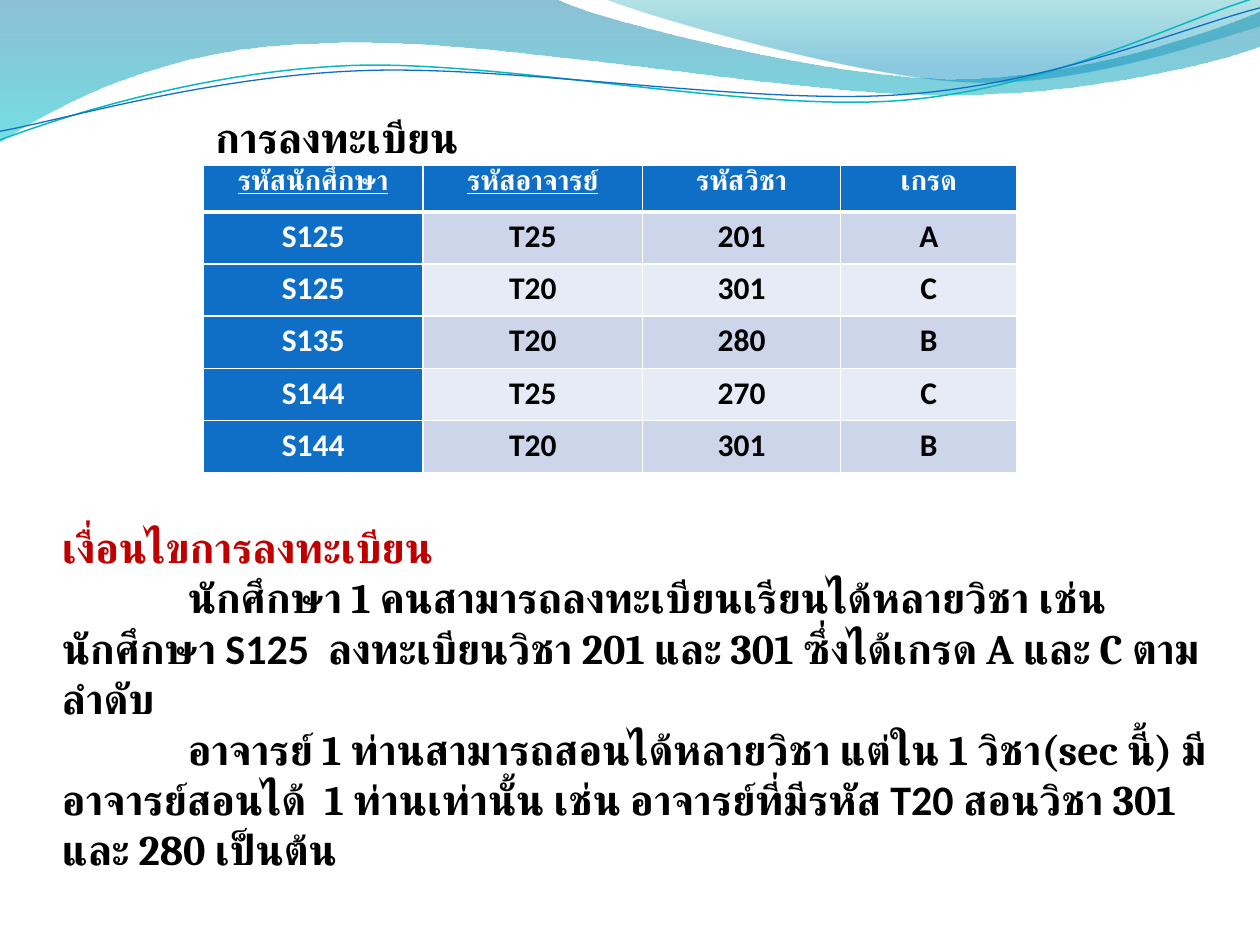
"""Build the course registration slide: a table and its conditions under a wave header."""
from lxml.etree import SubElement
from pptx import Presentation
from pptx.dml.color import RGBColor
from pptx.enum.text import MSO_ANCHOR, MSO_AUTO_SIZE, PP_ALIGN
from pptx.oxml.ns import qn
from pptx.util import Pt

COLORS = {
    "white": "FFFFFF", "black": "000000", "blue": "0F6FC6", "red": "C00000",
    "band_dark": "CCD5EA", "band_light": "E7EBF5", "teal": "0AB8BF",
    "deep_blue": "0074A1", "cyan": "00C6CF", "green": "00A1A9", "sky": "008BBF",
}


def style_font(font, name, size, color):
    """Set a bold font for Latin and Thai text alike."""
    font.name, font.size, font.bold = name, Pt(size), True
    font.color.rgb = RGBColor.from_string(COLORS[color])
    SubElement(font._element, qn("a:cs"), typeface=name)


def draw_path(shapes, start, steps, closed):
    """Draw a freeform from line ends (x, y) and cubic curves (x1, y1, x2, y2, x, y)."""
    builder = shapes.build_freeform(Pt(start[0]), Pt(start[1]))
    builder.add_line_segments([(Pt(step[-2]), Pt(step[-1])) for step in steps], close=closed)
    shape = builder.convert_to_shape()
    shape.shadow.inherit = False
    segments = list(shape._element.iter(qn("a:lnTo")))
    for segment, step in zip(segments, steps):
        if len(step) == 6:
            curve = SubElement(segment.getparent(), qn("a:cubicBezTo"))
            for x, y in zip(step[::2], step[1::2]):
                SubElement(curve, qn("a:pt"), x=str(Pt(x) - shape.left), y=str(Pt(y) - shape.top))
            segment.getparent().replace(segment, curve)
    return shape


deck = Presentation()
deck.slide_width, deck.slide_height = Pt(720), Pt(540)
page = deck.slides.add_slide(deck.slide_layouts[5])

waves = [
    ((0, 0), [(317, -1), (343, 12, 478, 45, 546, 45), (614, 45, 690, 19, 720, 6.5), (721, 26),
              (708, 32, 626, 55, 537, 54), (448, 54, 275, 20, 185, 24.5), (93, 26, 33, 60, -1, 81.5)],
     [(0, "deep_blue", 45), (1, "cyan", 55)]),
    ((345, -1), [(366, 8, 491, 45, 554, 47), (616, 50, 692, 23, 720, 15), (720, 0)],
     [(0, "green", 30), (0.8, "sky", 45)]),
]
for start, steps, stops in waves:
    wave = draw_path(page.shapes, start, steps, True)
    wave.line.fill.background()
    wave.fill.gradient()
    wave.fill.gradient_angle = 270
    for stop, (position, color, opacity) in zip(wave.fill.gradient_stops, stops):
        stop.position = position
        stop.color.rgb = RGBColor.from_string(COLORS[color])
        color_element = stop._gs.find(qn("a:srgbClr"))
        SubElement(color_element, qn("a:alpha"), val=str(opacity * 1000))

strands = [
    ((0, 80), [(34.5, 67, 114, 41, 199.5, 37.5), (284.5, 34, 427, 64, 513.5, 57.5),
               (600, 51, 675, 11, 718.5, -1.5)], "teal", 0.85),
    ((0, 75), [(34, 69, 118, 44, 204, 40.5), (290, 36.5, 430, 60.5, 516, 54),
               (602, 48, 678, 15, 720, 4.5)], "blue", 0.75),
]
for start, steps, color, width in strands:
    strand = draw_path(page.shapes, start, steps, False)
    strand.fill.background()
    strand.line.color.rgb = RGBColor.from_string(COLORS[color])
    strand.line.width = Pt(width)

rows = [
    ("รหัสนักศึกษา", "รหัสอาจารย์", "รหัสวิชา", "เกรด"),
    ("S125", "T25", "201", "A"),
    ("S125", "T20", "301", "C"),
    ("S135", "T20", "280", "B"),
    ("S144", "T25", "270", "C"),
    ("S144", "T20", "301", "B"),
]
widths = [125.5, 125.5, 113.2, 100.8]
table = page.shapes.add_table(len(rows), len(widths), Pt(116.2), Pt(94.6), Pt(465), Pt(175.5)).table
for column, width in zip(table.columns, widths):
    column.width = Pt(width)
for r, texts in enumerate(rows):
    table.rows[r].height = Pt(26.5 if r == 0 else 29.8)
    for c, text in enumerate(texts):
        cell = table.cell(r, c)
        cell.text = text
        cell.margin_left = cell.margin_right = Pt(5)
        cell.margin_top = cell.margin_bottom = 0
        para = cell.text_frame.paragraphs[0]
        para.alignment = PP_ALIGN.CENTER
        para.line_spacing = 1.0 if r == 0 else 1.15
        span = para.runs[0]
        dark = r == 0 or c == 0
        style_font(span.font, "Cambria" if r == 0 else "Calibri", 16 if r == 0 else 18,
                   "white" if dark else "black")
        span.font.underline = r == 0 and c < 2
        properties = cell._tc.get_or_add_tcPr()
        for side in ("L", "R", "T", "B"):
            thick = (r, side) in ((0, "B"), (1, "T"))
            border = SubElement(properties, qn(f"a:ln{side}"), w=str(Pt(3 if thick else 1)))
            SubElement(SubElement(border, qn("a:solidFill")), qn("a:srgbClr"), val=COLORS["white"])
        cell.fill.solid()
        band = "band_dark" if r % 2 else "band_light"
        cell.fill.fore_color.rgb = RGBColor.from_string(COLORS["blue" if dark else band])

title = page.shapes.title
title.left, title.top, title.width, title.height = Pt(115.8), Pt(60), Pt(175.7), Pt(36)
title.text_frame.text = "การลงทะเบียน"
title.text_frame.vertical_anchor = MSO_ANCHOR.MIDDLE
title.text_frame.auto_size = MSO_AUTO_SIZE.SHAPE_TO_FIT_TEXT
title.text_frame.paragraphs[0].alignment = PP_ALIGN.LEFT
style_font(title.text_frame.paragraphs[0].runs[0].font, "Arial", 24, "black")

conditions = [
    [("เงื่อนไขการลงทะเบียน", "Cambria", "red")],
    [("\tนักศึกษา 1 คนสามารถลงทะเบียนเรียนได้หลายวิชา เช่น นักศึกษา ", "Cambria", "black"),
     ("S125  ", "Calibri", "black"),
     ("ลงทะเบียนวิชา 201 และ 301 ซึ่งได้เกรด A และ C ตามลำดับ", "Cambria", "black")],
    [("\tอาจารย์ 1 ท่านสามารถสอนได้หลายวิชา แต่ใน 1 วิชา(sec นี้) มีอาจารย์สอนได้  1 ท่านเท่านั้น "
      "เช่น อาจารย์ที่มีรหัส ", "Cambria", "black"),
     ("T20 ", "Calibri", "black"),
     ("สอนวิชา 301 และ 280 เป็นต้น", "Cambria", "black")],
]
box = page.shapes.add_textbox(Pt(28.3), Pt(294.5), Pt(689), Pt(152.6))
box.text_frame.word_wrap = True
box.text_frame.auto_size = MSO_AUTO_SIZE.SHAPE_TO_FIT_TEXT
for i, spans in enumerate(conditions):
    para = box.text_frame.paragraphs[0] if i == 0 else box.text_frame.add_paragraph()
    tabs = SubElement(para._p.get_or_add_pPr(), qn("a:tabLst"))
    SubElement(tabs, qn("a:tab"), pos=str(Pt(72)), algn="l")
    for text, name, color in spans:
        span = para.add_run()
        span.text = text
        style_font(span.font, name, 24, color)

deck.save("out.pptx")
